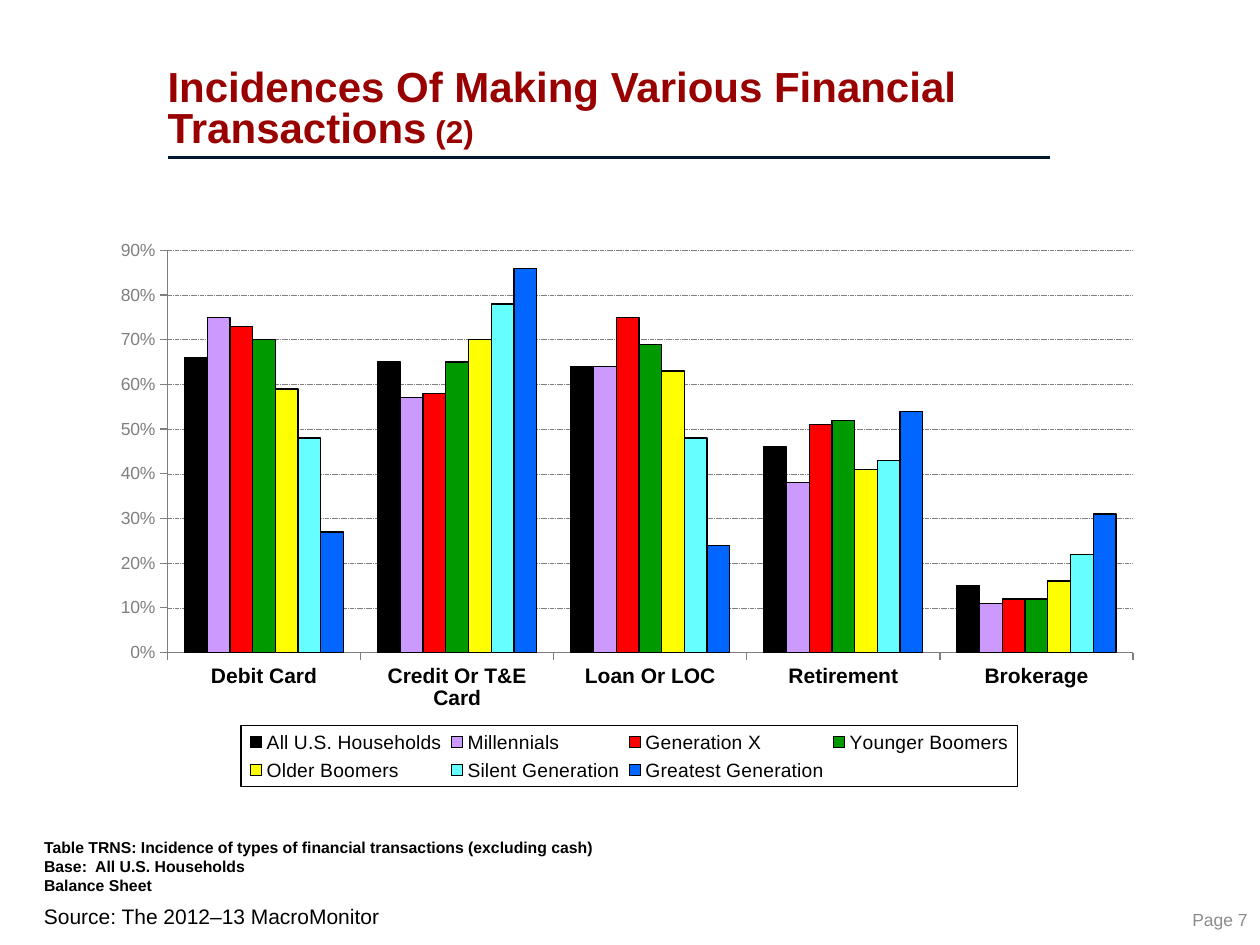
from dataclasses import dataclass
from typing import NamedTuple

import pptx
import pptx.chart.data
import pptx.dml.color
import pptx.enum.chart
import pptx.enum.dml
import pptx.enum.shapes
import pptx.enum.text
import pptx.oxml
import pptx.oxml.ns
import pptx.util
from pptx.util import Inches

ANCHOR = pptx.enum.text.MSO_ANCHOR
ALIGN = pptx.enum.text.PP_ALIGN


@dataclass(frozen=True)
class Theme:
    font: str = "Arial"
    title: str = "990000"
    rule: str = "00192F"
    ink: str = "000000"
    axis: str = "7F7F7F"
    page: str = "8C8C8C"
    title_size: int = 24
    part_size: int = 18
    source_size: int = 12
    category_size: int = 12
    legend_size: int = 11
    small_size: int = 10
    note_size: int = 9


class Box(NamedTuple):
    left: float
    top: float
    width: float
    height: float

    def lengths(self):
        return [Inches(side) for side in self]


class Generation(NamedTuple):
    name: str
    color: str
    shares: tuple


THEME = Theme()
CATEGORIES = ("Debit Card", "Credit Or T&E Card", "Loan Or LOC", "Retirement", "Brokerage")
GENERATIONS = (
    Generation("All U.S. Households", "000000", (0.66, 0.65, 0.64, 0.46, 0.15)),
    Generation("Millennials", "CC99FF", (0.75, 0.57, 0.64, 0.38, 0.11)),
    Generation("Generation X", "FF0000", (0.73, 0.58, 0.75, 0.51, 0.12)),
    Generation("Younger Boomers", "009900", (0.70, 0.65, 0.69, 0.52, 0.12)),
    Generation("Older Boomers", "FFFF00", (0.59, 0.70, 0.63, 0.41, 0.16)),
    Generation("Silent Generation", "66FFFF", (0.48, 0.78, 0.48, 0.43, 0.22)),
    Generation("Greatest Generation", "0066FF", (0.27, 0.86, 0.24, 0.54, 0.31)),
)


def rgb(color: str):
    return pptx.dml.color.RGBColor.from_string(color)


def style_font(font, size: float, color: str, bold: bool = False) -> None:
    font.name = THEME.font
    font.size = pptx.util.Pt(size)
    font.bold = bold
    font.color.rgb = rgb(color)


def style_line(line, color: str, width: float) -> None:
    line.color.rgb = rgb(color)
    line.width = pptx.util.Pt(width)


def write(paragraph, text: str, *, size: float, color: str, bold: bool = False) -> None:
    """Add text to a paragraph, with a line break at each newline."""
    for number, line in enumerate(text.split("\n")):
        if number:
            paragraph.add_line_break()
        run = paragraph.add_run()
        run.text = line
        style_font(run.font, size, color, bold)


def set_frame(frame, anchor, insets: tuple):
    frame.word_wrap = True
    frame.auto_size = pptx.enum.text.MSO_AUTO_SIZE.NONE
    frame.vertical_anchor = anchor
    (frame.margin_left, frame.margin_top,
     frame.margin_right, frame.margin_bottom) = map(Inches, insets)
    return frame.paragraphs[0]


def add_label(slide, box: Box, text: str, *, anchor=ANCHOR.TOP, align=ALIGN.LEFT,
              insets: tuple = (0.1, 0.05, 0.1, 0.05), **style) -> None:
    label = slide.shapes.add_textbox(*box.lengths())
    paragraph = set_frame(label.text_frame, anchor, insets)
    paragraph.alignment = align
    write(paragraph, text, **style)


def add_title(slide, box: Box) -> None:
    title = slide.shapes.title
    title.left, title.top, title.width, title.height = box.lengths()
    paragraph = set_frame(title.text_frame, ANCHOR.BOTTOM, (0, 0.05, 0, 0.05))
    paragraph.alignment = ALIGN.LEFT
    paragraph.line_spacing = 0.8
    write(paragraph, "Incidences Of Making Various Financial Transactions",
          size=THEME.title_size, color=THEME.title, bold=True)
    write(paragraph, " (2)", size=THEME.part_size, color=THEME.title, bold=True)


def add_rule(slide, left: float, right: float, top: float) -> None:
    rule = slide.shapes.add_connector(
        pptx.enum.shapes.MSO_CONNECTOR.STRAIGHT,
        Inches(left), Inches(top), Inches(right), Inches(top))
    style_line(rule.line, THEME.rule, 2)
    rule._element.spPr.append(pptx.oxml.parse_xml(
        f"<a:effectLst {pptx.oxml.ns.nsdecls('a')}/>"))


def place_part(element, index: int, fractions: Box, target: str = "") -> None:
    """Place a chart part by fractions of the chart area."""
    for old in element.findall(pptx.oxml.ns.qn("c:layout")):
        element.remove(old)
    modes = '<c:xMode val="edge"/><c:yMode val="edge"/>'
    sides = "".join(f'<c:{tag} val="{value}"/>' for tag, value in zip("xywh", fractions))
    element.insert(index, pptx.oxml.parse_xml(
        f"<c:layout {pptx.oxml.ns.nsdecls('c')}><c:manualLayout>"
        f"{target}{modes}{sides}</c:manualLayout></c:layout>"))


def style_legend(chart) -> None:
    chart.has_legend = True
    legend = chart.legend
    legend.position = pptx.enum.chart.XL_LEGEND_POSITION.BOTTOM
    legend.include_in_layout = False
    style_font(legend.font, THEME.legend_size, THEME.ink)
    element = legend._element
    place_part(element, 1, Box(0.13, 0.89, 0.74, 0.11))
    element.find(pptx.oxml.ns.qn("c:overlay")).addnext(pptx.oxml.parse_xml(
        f"<c:spPr {pptx.oxml.ns.nsdecls('c', 'a')}><a:ln w=\"9525\"><a:solidFill>"
        f"<a:srgbClr val=\"{THEME.ink}\"/></a:solidFill></a:ln></c:spPr>"))


def style_axes(chart) -> None:
    for axis in (chart.category_axis, chart.value_axis):
        axis.major_tick_mark = pptx.enum.chart.XL_TICK_MARK.OUTSIDE
        axis.minor_tick_mark = pptx.enum.chart.XL_TICK_MARK.NONE
        style_line(axis.format.line, THEME.axis, 0.75)
    style_font(chart.category_axis.tick_labels.font, THEME.category_size, THEME.ink, True)

    share_axis = chart.value_axis
    share_axis.minimum_scale, share_axis.maximum_scale = 0, 0.9
    share_axis.major_unit = 0.1
    share_axis.tick_labels.number_format = "0%"
    share_axis.tick_labels.number_format_is_linked = False
    style_font(share_axis.tick_labels.font, THEME.small_size, THEME.axis)
    grid = share_axis.major_gridlines.format.line
    style_line(grid, THEME.axis, 0.25)
    grid.dash_style = pptx.enum.dml.MSO_LINE.SQUARE_DOT


def add_shares_chart(slide, box: Box) -> None:
    shares = pptx.chart.data.CategoryChartData(number_format="0%")
    shares.categories = CATEGORIES
    for generation in GENERATIONS:
        shares.add_series(generation.name, generation.shares)
    chart = slide.shapes.add_chart(
        pptx.enum.chart.XL_CHART_TYPE.COLUMN_CLUSTERED, *box.lengths(), shares).chart
    chart.has_title = False
    style_font(chart.font, THEME.small_size, THEME.ink)
    columns = chart.plots[0]
    columns.vary_by_categories = False
    columns.gap_width, columns.overlap = 150, 0
    for series, generation in zip(columns.series, GENERATIONS):
        series.invert_if_negative = False
        series.format.fill.solid()
        series.format.fill.fore_color.rgb = rgb(generation.color)
        style_line(series.format.line, THEME.ink, 0.75)
    style_axes(chart)
    style_legend(chart)
    place_part(chart._chartSpace.chart.plotArea, 0, Box(0.06, 0.04, 0.92, 0.72),
               '<c:layoutTarget val="inner"/>')


def main() -> None:
    deck = pptx.Presentation()
    deck.slide_width, deck.slide_height = Inches(10), Inches(7.5)
    slide = deck.slides.add_slide(deck.slide_layouts[5])

    # Heading
    add_rule(slide, 1.33, 8.33, 1.25)
    add_title(slide, Box(1.33, 0.08, 7.17, 1.17))

    # Shares by generation
    add_shares_chart(slide, Box(0.83, 1.81, 8.33, 4.44))

    # Notes, source and page number
    add_label(slide, Box(0, 6.42, 7.02, 0.81),
              "Table TRNS: Incidence of types of financial transactions (excluding cash)\n"
              "Base:  All U.S. Households\nBalance Sheet",
              anchor=ANCHOR.BOTTOM, insets=(0.35, 0.13, 0, 0.13),
              size=THEME.note_size, color=THEME.ink, bold=True)
    add_label(slide, Box(0.25, 7.12, 8.58, 0.3), "Source: The 2012–13 MacroMonitor",
              size=THEME.source_size, color=THEME.ink)
    add_label(slide, Box(9.26, 7.16, 0.74, 0.27), "Page 7", anchor=ANCHOR.MIDDLE,
              align=ALIGN.RIGHT, size=THEME.small_size, color=THEME.page)
    deck.save("out.pptx")


if __name__ == "__main__":
    main()
